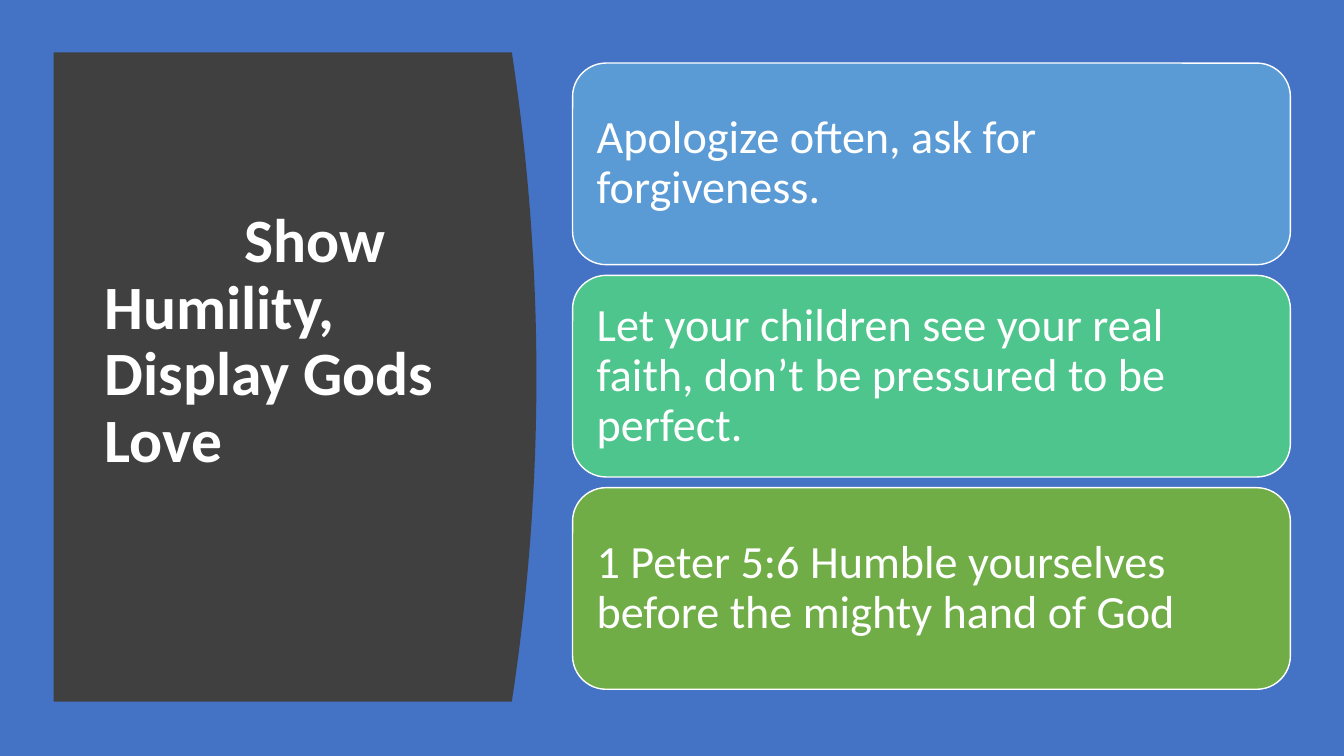
"""Build the slide on showing humility: a curved title panel beside three cards."""
from pptx import Presentation
from pptx.dml.color import RGBColor
from pptx.enum.shapes import MSO_SHAPE
from pptx.enum.text import MSO_ANCHOR, PP_ALIGN
from pptx.util import Cm, Pt

COLORS = {
    "background": "4472C4",
    "panel": "404040",
    "white": "FFFFFF",
    "blue": "5B9BD5",
    "teal": "4DC58D",
    "green": "70AD47",
}
TITLE = "Show Humility, Display Gods Love"
CARDS = [
    ("Apologize often, ask for forgiveness.", "blue"),
    ("Let your children see your real faith, don’t be pressured to be perfect.", "teal"),
    ("1 Peter 5:6 Humble yourselves before the mighty hand of God", "green"),
]
PANEL = {"left": 1.35, "top": 1.32, "edge": 12.9, "bulge": 0.62, "height": 16.36}
CURVE_STEPS = 40
CARD = {"left": 14.43, "top": 1.59, "width": 18.09, "height": 5.08, "pitch": 5.35}
CARD_INSET = 0.36


def color(name):
    return RGBColor.from_string(COLORS[name])


def write(shape, text, size, bold=False):
    frame = shape.text_frame
    frame.word_wrap = True
    frame.vertical_anchor = MSO_ANCHOR.MIDDLE
    paragraph = frame.paragraphs[0]
    paragraph.text = text
    paragraph.alignment = PP_ALIGN.LEFT
    paragraph.line_spacing = 0.9
    paragraph.font.name = "Calibri"
    paragraph.font.size = Pt(size)
    paragraph.font.bold = bold
    paragraph.font.color.rgb = color("white")
    return frame


def add_panel(slide):
    left, top = PANEL["left"], PANEL["top"]
    points = []
    for step in range(CURVE_STEPS + 1):
        fraction = step / CURVE_STEPS
        x = PANEL["edge"] + PANEL["bulge"] * (1 - (2 * fraction - 1) ** 2)
        points.append((Cm(x), Cm(top + PANEL["height"] * fraction)))
    points.append((Cm(left), Cm(top + PANEL["height"])))
    builder = slide.shapes.build_freeform(Cm(left), Cm(top))
    builder.add_line_segments(points, close=True)
    panel = builder.convert_to_shape()
    panel.shadow.inherit = False
    panel.fill.solid()
    panel.fill.fore_color.rgb = color("panel")
    panel.line.fill.background()


def add_title(slide):
    title = slide.shapes.add_textbox(Cm(2.39), Cm(2.82), Cm(9.5), Cm(13.31))
    frame = write(title, TITLE, 44, bold=True)
    frame.margin_bottom = Cm(1.8)
    properties = frame.paragraphs[0]._p.get_or_add_pPr()
    properties.set("indent", str(Cm(3.52)))


def add_card(slide, index, text, fill):
    top = CARD["top"] + index * CARD["pitch"]
    card = slide.shapes.add_shape(
        MSO_SHAPE.ROUNDED_RECTANGLE,
        Cm(CARD["left"]), Cm(top), Cm(CARD["width"]), Cm(CARD["height"]),
    )
    card.shadow.inherit = False
    card.fill.solid()
    card.fill.fore_color.rgb = color(fill)
    card.line.color.rgb = color("white")
    card.line.width = Pt(1)
    frame = write(card, text, 33)
    frame.margin_left = frame.margin_right = Cm(CARD_INSET)
    frame.margin_top = frame.margin_bottom = Cm(CARD_INSET)


def main():
    presentation = Presentation()
    presentation.slide_width = Cm(33.87)
    presentation.slide_height = Cm(19.05)
    slide = presentation.slides.add_slide(presentation.slide_layouts[6])
    slide.background.fill.solid()
    slide.background.fill.fore_color.rgb = color("background")
    add_panel(slide)
    add_title(slide)
    for index, (text, fill) in enumerate(CARDS):
        add_card(slide, index, text, fill)
    presentation.save("out.pptx")


if __name__ == "__main__":
    main()
